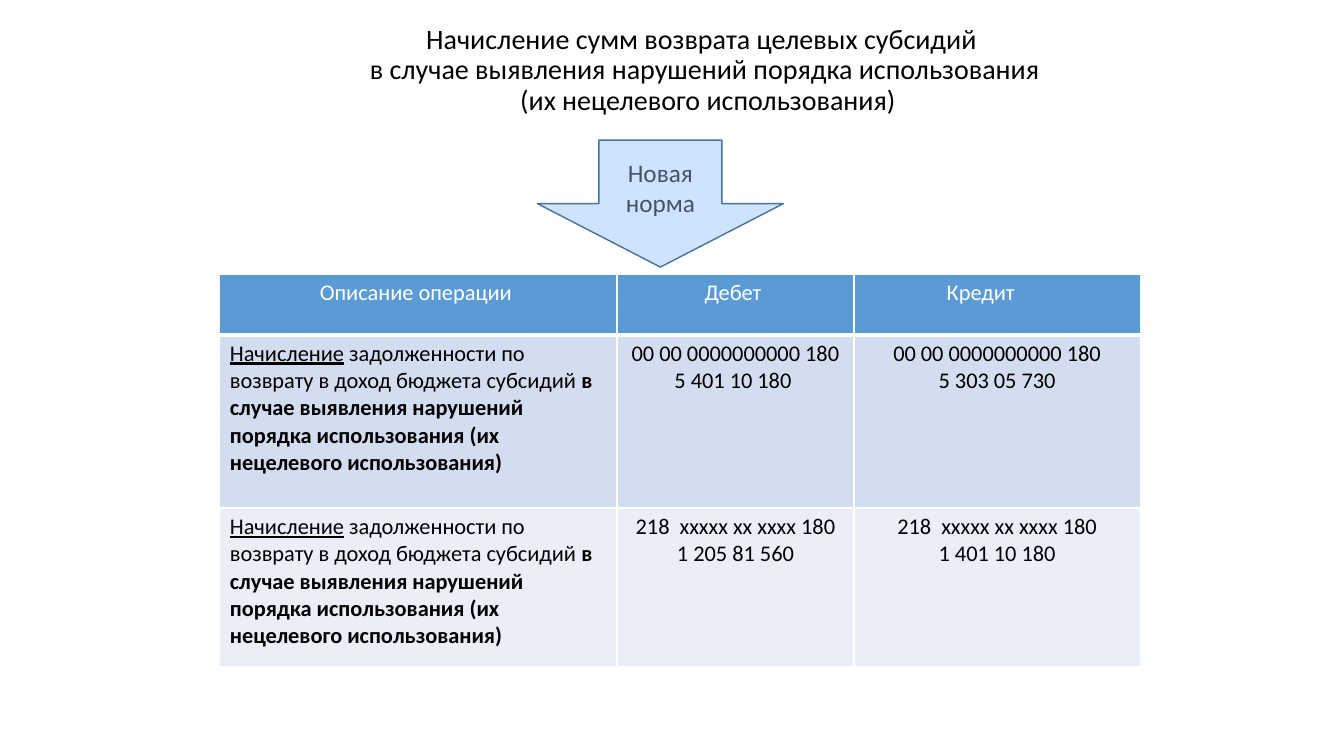
from lxml.etree import SubElement
from pptx import Presentation
from pptx.dml.color import RGBColor
from pptx.enum.shapes import MSO_SHAPE
from pptx.enum.text import MSO_ANCHOR, MSO_AUTO_SIZE, PP_ALIGN
from pptx.oxml import parse_xml
from pptx.oxml.ns import nsdecls, qn
from pptx.util import Inches, Pt

COLORS = {
    "black": "000000", "white": "FFFFFF", "header": "5B9BD5",
    "band_dark": "D2DEEF", "band_light": "EAEFF7",
    "arrow": "D0E3FE", "arrow_line": "43739E", "arrow_text": "44546A",
}
HEADERS = ["Описание операции ", "Дебет ", "Кредит \t"]
DESCRIPTION = [
    ("Начисление", {"underline": True}),
    (" задолженности по возврату в доход бюджета субсидий ", {}),
    ("в случае выявления нарушений порядка использования "
     "(их нецелевого использования)", {"bold": True}),
]
ENTRIES = [
    (["00 00 0000000000 180", "5 401 10 180 "], ["00 00 0000000000 180", "5 303 05 730"]),
    (["218  ххххх хх хххх 180", "1 205 81 560"], ["218  ххххх хх хххх 180", "1 401 10 180"]),
]
COLUMN_WIDTHS = [3.94, 2.35, 2.84]
ROW_HEIGHTS = [0.6, 1.72, 1.57]


def rgb(name):
    """Return the named colour."""
    return RGBColor.from_string(COLORS[name])


def style(paragraph, size, color, align=PP_ALIGN.CENTER):
    """Set the alignment and font of a paragraph."""
    paragraph.alignment = align
    paragraph.font.name = "Calibri"
    paragraph.font.size = Pt(size)
    paragraph.font.color.rgb = rgb(color)


def add_heading(slide, left, top, width, height):
    """Place the slide title in its box."""
    title = slide.shapes.title
    title.left, title.top = Inches(left), Inches(top)
    title.width, title.height = Inches(width), Inches(height)
    frame = title.text_frame
    frame.word_wrap = True
    frame.auto_size = MSO_AUTO_SIZE.NONE
    frame.vertical_anchor = MSO_ANCHOR.MIDDLE
    heading = frame.paragraphs[0]
    heading.text = ("Начисление сумм возврата целевых субсидий \v"
                    "в случае выявления нарушений порядка использования\v"
                    " (их нецелевого использования)\v")
    heading.line_spacing = 0.9
    style(heading, 20, "black")


def add_new_rule_arrow(slide, left, top, width, height):
    """Draw the labelled arrow that points at the table."""
    arrow = slide.shapes.add_shape(MSO_SHAPE.DOWN_ARROW, Inches(left), Inches(top),
                                   Inches(width), Inches(height))
    arrow.shadow.inherit = False
    arrow.fill.solid()
    arrow.fill.fore_color.rgb = rgb("arrow")
    arrow.line.color.rgb = rgb("arrow_line")
    arrow.line.width = Pt(1)
    arrow.text_frame.word_wrap = True
    arrow.text_frame.vertical_anchor = MSO_ANCHOR.MIDDLE
    label = arrow.text_frame.paragraphs[0]
    label.text = "Новая норма"
    style(label, 18, "arrow_text")


def format_cell(cell, fill, top_border, bottom_border):
    """Fill a cell and give it white borders."""
    cell.fill.solid()
    cell.fill.fore_color.rgb = rgb(fill)
    properties = cell._tc.get_or_add_tcPr()
    widths = {"lnL": 1, "lnR": 1, "lnT": top_border, "lnB": bottom_border}
    for position, (side, width) in enumerate(widths.items()):
        border = parse_xml(f'<a:{side} {nsdecls("a")} w="{Pt(width)}"/>')
        line_fill = SubElement(border, qn("a:solidFill"))
        SubElement(line_fill, qn("a:srgbClr"), val=COLORS["white"])
        properties.insert(position, border)


def write_lines(cell, lines, color):
    """Write centred lines, one paragraph each."""
    cell.text_frame.text = "\n".join(lines)
    for paragraph in cell.text_frame.paragraphs:
        style(paragraph, 16, color)


def write_description(cell):
    """Write the description of the operation with its emphasis."""
    paragraph = cell.text_frame.paragraphs[0]
    style(paragraph, 16, "black", PP_ALIGN.LEFT)
    for text, emphasis in DESCRIPTION:
        run = paragraph.add_run()
        run.text = text
        run.font.bold = emphasis.get("bold", False)
        run.font.underline = emphasis.get("underline", False)


def add_postings_table(slide, left, top, width, height):
    """Build the table of debit and credit postings."""
    postings = slide.shapes.add_table(len(ROW_HEIGHTS), len(COLUMN_WIDTHS), Inches(left),
                                      Inches(top), Inches(width), Inches(height)).table
    for column, column_width in zip(postings.columns, COLUMN_WIDTHS):
        column.width = Inches(column_width)
    for row, row_height in zip(postings.rows, ROW_HEIGHTS):
        row.height = Inches(row_height)
    for index, header in enumerate(HEADERS):
        cell = postings.cell(0, index)
        format_cell(cell, "header", 1, 3)
        write_lines(cell, [header], "white")
        cell.text_frame.paragraphs[0].font.bold = False
    for number, accounts in enumerate(ENTRIES, start=1):
        band = "band_dark" if number % 2 else "band_light"
        for cell in postings.rows[number].cells:
            format_cell(cell, band, 3 if number == 1 else 1, 1)
        write_description(postings.cell(number, 0))
        for index, lines in enumerate(accounts, start=1):
            write_lines(postings.cell(number, index), lines, "black")


def main():
    """Build and save the slide."""
    deck = Presentation()
    deck.slide_width, deck.slide_height = Inches(13.33), Inches(7.5)
    slide = deck.slides.add_slide(deck.slide_layouts[5])
    add_heading(slide, 2.49, 0.68, 9, 0.38)
    add_postings_table(slide, 2.18, 2.72, sum(COLUMN_WIDTHS), sum(ROW_HEIGHTS))
    add_new_rule_arrow(slide, 5.33, 1.39, 2.44, 1.26)
    deck.save("out.pptx")


if __name__ == "__main__":
    main()
